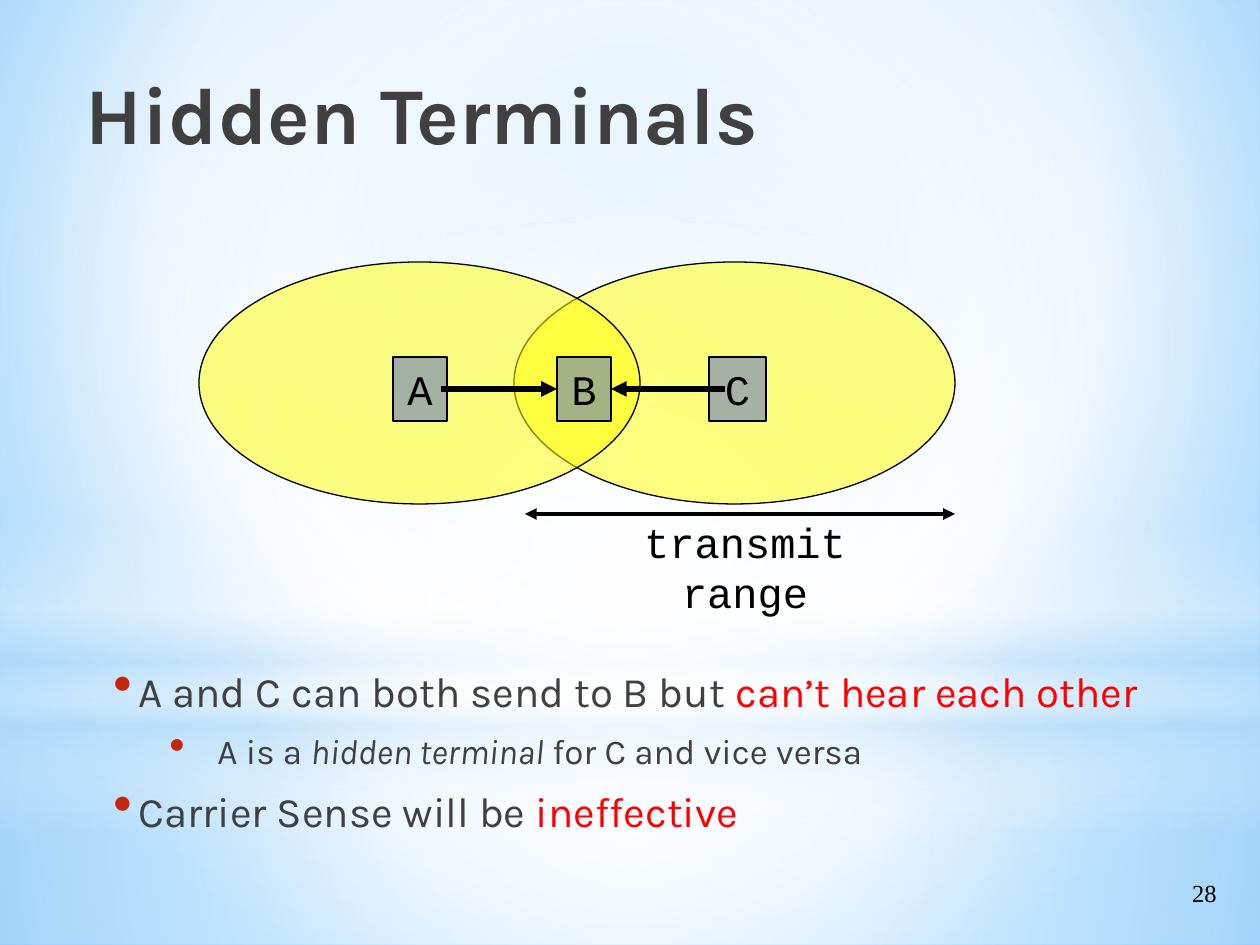
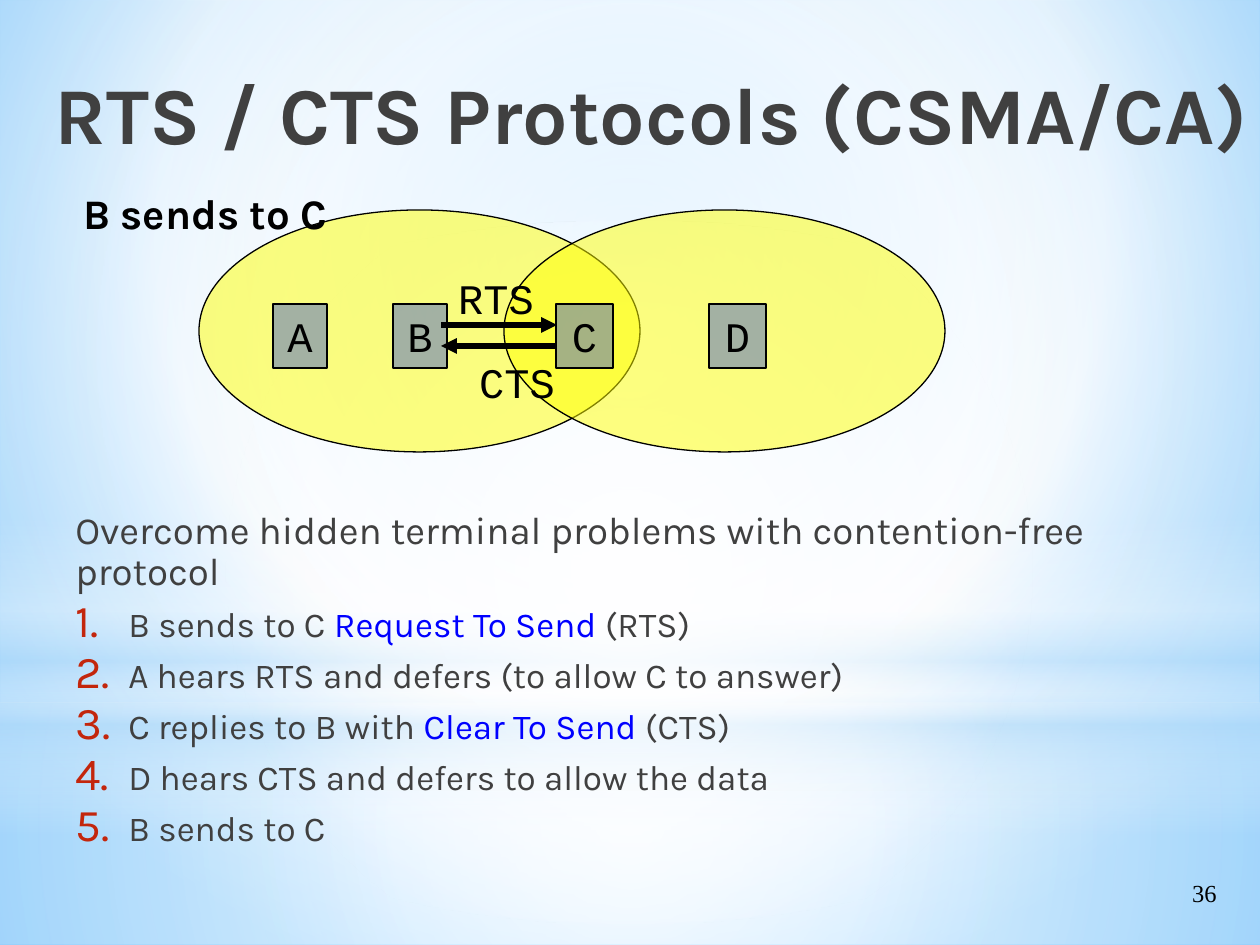
from lxml.etree import SubElement
from pptx import Presentation
from pptx.dml.color import RGBColor
from pptx.enum.shapes import MSO_CONNECTOR, MSO_SHAPE
from pptx.enum.text import MSO_ANCHOR, MSO_AUTO_SIZE, PP_ALIGN
from pptx.oxml.ns import qn
from pptx.util import Emu, Pt

SCALE = 914400 / 126
SANS, MONO, SERIF = "Karla", "Courier New", "Times New Roman"
INK, BLACK, RED, BLUE = "404040", "000000", "FF0000", "0000FF"
BULLET, RANGE, TERMINAL = "C3260C", "FFFF00", "4E67C8"
WHITE, SKY = "FFFFFF", "B4DCFA"
RANGE_SIZE = (441, 242)
TERMINAL_HEIGHT = 64
TITLE_TOP, TITLE_HEIGHT = 58, 94
CENTRE = (50, 50, 50, 50)

BACKDROP = [(0, "9ED5FF", 100), (60, WHITE, 100), (100, "5BB9FF", 100)]
BANDS = [
    (MSO_SHAPE.RECTANGLE, (0, 703, 1260, 242),
     [(0, WHITE, 91), (37, WHITE, 76), (100, SKY, 79)], CENTRE),
    (MSO_SHAPE.RECTANGLE, (0, 0, 1260, 703),
     [(0, WHITE, 89), (48, WHITE, 62), (100, SKY, 79)], CENTRE),
    (MSO_SHAPE.RECTANGLE, (0, 519, 1260, 315),
     [(0, WHITE, 0), (29, WHITE, 30), (45, SKY, 40),
      (55, WHITE, 26), (65, SKY, 60), (100, WHITE, 0)], None),
    (MSO_SHAPE.OVAL, (0, 221, 1260, 703),
     [(0, WHITE, 100), (56, WHITE, 0)], CENTRE),
]


def px(length):
    """Turn px into EMU."""
    return Emu(round(length * SCALE))


def box(*lengths):
    """Turn several px lengths into EMU."""
    return [px(length) for length in lengths]


def rgb(value):
    """Turn a hex string into a colour."""
    return RGBColor.from_string(value)


def add(parent, tag, **attributes):
    """Append a DrawingML child element."""
    return SubElement(parent, qn(f"a:{tag}"),
                      {key: str(value) for key, value in attributes.items()})


def set_gradient(owner, stops, focus):
    """Swap the empty fill for a circular gradient, or a vertical one without focus."""
    empty_fill = owner.find(f".//{qn('a:noFill')}")
    parent = empty_fill.getparent()
    gradient = add(parent, "gradFill", rotWithShape=1)
    parent.replace(empty_fill, gradient)
    stop_list = add(gradient, "gsLst")
    for position, colour, opacity in stops:
        stop = add(stop_list, "gs", pos=position * 1000)
        add(add(stop, "srgbClr", val=colour), "alpha", val=opacity * 1000)
    if focus:
        sides = {side: share * 1000 for side, share in zip("ltrb", focus)}
        add(add(gradient, "path", path="circle"), "fillToRect", **sides)
    else:
        add(gradient, "lin", ang=5400000, scaled=0)


def dress_master(prs, slide):
    """Give the master the backdrop and light bands that all slides share."""
    master = prs.slide_master
    master.background.fill.background()
    set_gradient(master._element.cSld, BACKDROP, (20, 10, 20, 60))
    for order, (preset, place, stops, focus) in enumerate(BANDS):
        band = slide.shapes.add_shape(preset, *box(*place))
        band.shadow.inherit = False
        band.fill.background()
        set_gradient(band._element.spPr, stops, focus)
        band.line.fill.background()
        band._element.nvSpPr.cNvPr.set("id", str(100 + order))
        master.shapes._spTree.insert(2 + order, band._element)


def style(paragraph, size, font=SANS, colour=BLACK, bold=False, align=PP_ALIGN.LEFT):
    """Set the font and alignment of a paragraph."""
    paragraph.alignment = align
    paragraph.font.size = Pt(size)
    paragraph.font.name = font
    paragraph.font.bold = bold
    paragraph.font.color.rgb = rgb(colour)


def add_title(slide, text, left, width):
    """Fill and place the title placeholder."""
    title = slide.shapes.title
    title.left, title.top, title.width, title.height = box(
        left, TITLE_TOP, width, TITLE_HEIGHT)
    frame = title.text_frame
    frame.text = text
    frame.word_wrap = False
    frame.auto_size = MSO_AUTO_SIZE.NONE
    frame.vertical_anchor = MSO_ANCHOR.TOP
    style(frame.paragraphs[0], 46, colour=INK, bold=True)


def add_label(slide, text, place, size=24, wrap=False, **look):
    """Add a one-paragraph text box."""
    frame = slide.shapes.add_textbox(*box(*place)).text_frame
    frame.word_wrap = wrap
    frame.text = text
    style(frame.paragraphs[0], size, **look)


def add_page_number(slide, number):
    """Add the number at the bottom right."""
    add_label(slide, number, (1103, 872, 126, 53), 14, True,
              font=SERIF, align=PP_ALIGN.RIGHT)


def add_tinted(slide, preset, place, colour):
    """Add a half-transparent shape with a thin black outline."""
    shape = slide.shapes.add_shape(preset, *box(*place))
    shape.shadow.inherit = False
    shape.fill.solid()
    shape.fill.fore_color.rgb = rgb(colour)
    add(shape._element.spPr.find(f".//{qn('a:srgbClr')}"), "alpha", val=50000)
    shape.line.color.rgb = rgb(BLACK)
    shape.line.width = Pt(0.75)
    return shape


def add_range(slide, left, top):
    """Add the ellipse of one transmit range."""
    add_tinted(slide, MSO_SHAPE.OVAL, (left, top, *RANGE_SIZE), RANGE)


def add_terminal(slide, letter, left, top, width):
    """Add a lettered terminal."""
    terminal = add_tinted(slide, MSO_SHAPE.RECTANGLE,
                          (left, top, width, TERMINAL_HEIGHT), TERMINAL)
    frame = terminal.text_frame
    frame.word_wrap = False
    frame.vertical_anchor = MSO_ANCHOR.MIDDLE
    frame.text = letter
    style(frame.paragraphs[0], 24, MONO, align=PP_ALIGN.CENTER)
    return terminal


def add_arrow(slide, start, end, y, width=3, ends=("tailEnd",)):
    """Add a horizontal arrow."""
    arrow = slide.shapes.add_connector(MSO_CONNECTOR.STRAIGHT, *box(start, y, end, y))
    arrow.line.color.rgb = rgb(BLACK)
    arrow.line.width = Pt(width)
    outline = arrow._element.spPr.find(qn("a:ln"))
    for tip in ends:
        add(outline, tip, type="triangle")
    add(arrow._element.spPr, "effectLst")
    return arrow


def add_list(slide, place, items, gap, line_spacing=1.0):
    """Add paragraphs given as (size, margin, hanging, marker, runs)."""
    frame = slide.shapes.add_textbox(*box(*place)).text_frame
    frame.word_wrap = True
    for order, (size, margin, hanging, marker, runs) in enumerate(items):
        paragraph = frame.add_paragraph() if order else frame.paragraphs[0]
        properties = paragraph._p.get_or_add_pPr()
        properties.set("marL", str(px(margin)))
        properties.set("indent", str(px(-hanging)))
        if marker:
            add(add(properties, "buClr"), "srgbClr", val=BULLET)
            add(properties, "buSzPct", val=130000)
            tag, attributes = marker
            add(properties, tag, **attributes)
        paragraph.space_after = Pt(gap)
        paragraph.line_spacing = line_spacing
        style(paragraph, size, colour=INK)
        for text, look in runs:
            run = paragraph.add_run()
            run.text = text
            if look == "italic":
                run.font.italic = True
            elif look:
                run.font.color.rgb = rgb(look)


def build_hidden_terminals(slide):
    """Build the hidden terminal slide."""
    add_title(slide, "Hidden Terminals", 73, 1038)
    add_page_number(slide, "28")
    dot = ("buChar", {"char": "•"})
    add_list(slide, (94, 659, 1166, 190), [
        (24, 32, 25, dot, [("A and C can both send to B but ", None),
                           ("can’t hear each other", RED)]),
        (20, 111, 48, dot, [("A is a ", None), ("hidden terminal", "italic"),
                            (" for C and vice versa", None)]),
        (24, 32, 25, dot, [("Carrier Sense will be ", None), ("ineffective", RED)]),
    ], 8)
    for left in (514, 199):
        add_range(slide, left, 262)
    terminals = {letter: add_terminal(slide, letter, left, 357, width)
                 for letter, left, width in (("A", 393, 54), ("B", 557, 54),
                                             ("C", 709, 57))}
    add_arrow(slide, 441, 557, 389).end_connect(terminals["B"], 1)
    add_arrow(slide, 725, 611, 389).end_connect(terminals["B"], 3)
    add_arrow(slide, 525, 955, 514, 2.25, ("headEnd", "tailEnd"))
    add_label(slide, "transmit range", (598, 510, 294, 113), wrap=True,
              font=MONO, align=PP_ALIGN.CENTER)


def build_rts_cts(slide):
    """Build the RTS / CTS slide."""
    add_title(slide, "RTS / CTS Protocols (CSMA/CA)", 42, 1218)
    add_page_number(slide, "36")
    steps = [
        [("B sends to C ", None), ("Request To Send", BLUE), (" (RTS)", None)],
        [("A hears RTS and defers (to allow C to answer)", None)],
        [("C replies to B with ", None), ("Clear To Send", BLUE), (" (CTS)", None)],
        [("D hears CTS and defers to allow the data", None)],
        [("B sends to C", None)],
    ]
    number = ("buAutoNum", {"type": "arabicPeriod"})
    intro = "Overcome hidden terminal problems with contention-free protocol"
    add_list(slide, (63, 505, 1124, 350),
             [(22, 0, 0, None, [(intro, None)])]
             + [(20, 53, 53, number, runs) for runs in steps], 7.5, 0.9)
    for left in (199, 504):
        add_range(slide, left, 210)
    for letter, left, width in (("A", 273, 54), ("B", 393, 54),
                                ("C", 556, 57), ("D", 709, 57)):
        add_terminal(slide, letter, left, 304, width)
    add_arrow(slide, 441, 557, 325)
    add_arrow(slide, 557, 441, 346)
    for message, left, top in (("RTS", 441, 266), ("CTS", 462, 350)):
        add_label(slide, message, (left, top, 110, 63),
                  font=MONO, align=PP_ALIGN.CENTER)
    add_label(slide, "B sends to C", (58, 181, 282, 63), bold=True,
              align=PP_ALIGN.RIGHT)


def main():
    """Build and save the presentation."""
    prs = Presentation()
    prs.slide_width, prs.slide_height = box(1260, 945)
    title_only = prs.slide_layouts[5]
    hidden_terminals = prs.slides.add_slide(title_only)
    dress_master(prs, hidden_terminals)
    build_hidden_terminals(hidden_terminals)
    build_rts_cts(prs.slides.add_slide(title_only))
    prs.save("out.pptx")


if __name__ == "__main__":
    main()
